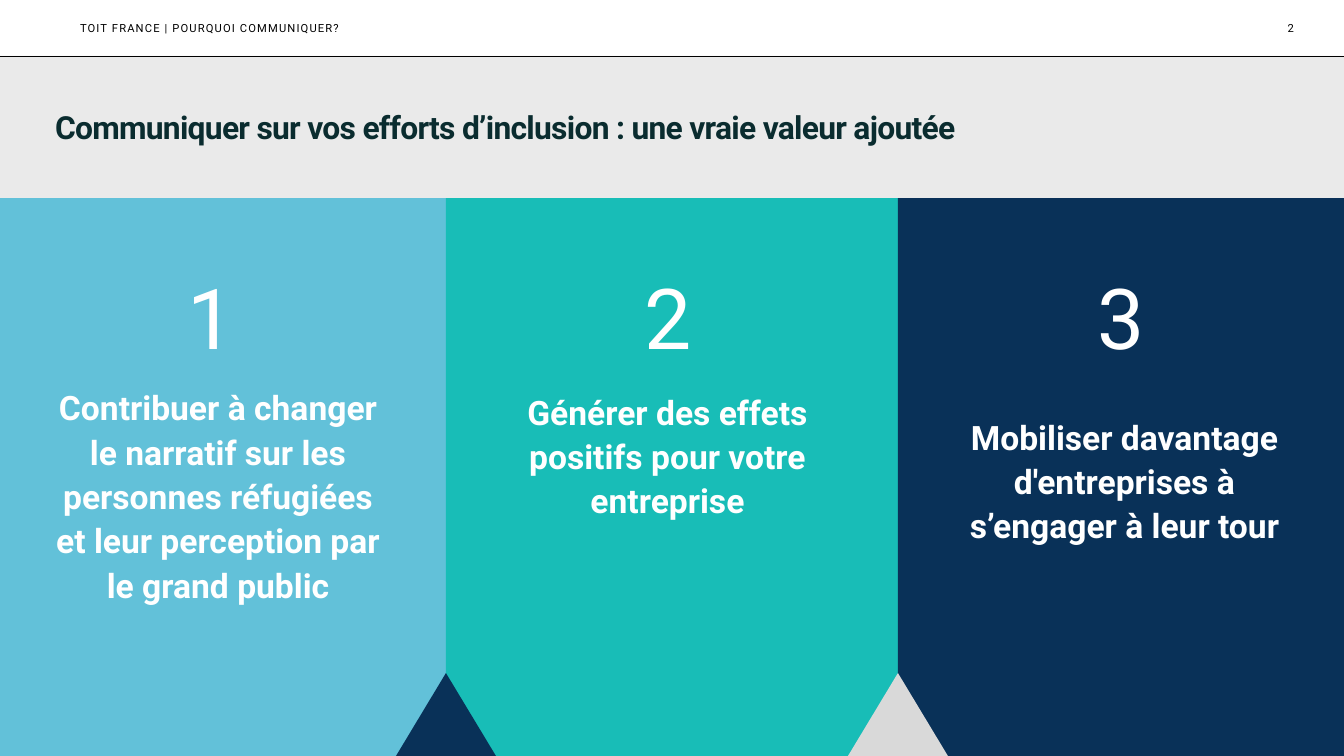
import pptx
import pptx.dml.color
import pptx.enum.shapes
import pptx.enum.text
import pptx.oxml
import pptx.oxml.ns
import pptx.util

PX = 914400 / 100.8
WIDTH, HEIGHT = 1344, 756
HEADER_H, BAND_H = 56, 142
FONT = "Roboto"
COLOURS = {
    "sky": "62C1D9", "teal": "18BDB7", "navy": "093158", "band": "EAEAEA",
    "grey": "D9D9D9", "ink": "0A2C2F", "black": "000000", "white": "FFFFFF",
}
LEFT = pptx.enum.text.PP_ALIGN.LEFT
CENTER = pptx.enum.text.PP_ALIGN.CENTER
RIGHT = pptx.enum.text.PP_ALIGN.RIGHT
TOP = pptx.enum.text.MSO_ANCHOR.TOP
MIDDLE = pptx.enum.text.MSO_ANCHOR.MIDDLE

# panel: left, width, colour, number left, caption box (left, top, width), caption
PANELS = [
    (0, 446, "sky", 188, (45, 374, 346),
     "Contribuer à changer le narratif sur les personnes réfugiées "
     "et leur perception par le grand public"),
    (446, 452, "teal", 199, (57, 334, 329),
     "Générer des effets positifs pour votre entreprise"),
    (898, 446, "navy", 200, (60, 359, 333),
     "Mobiliser davantage d'entreprises à s’engager à leur tour"),
]
NOTCHES = [(446, "navy"), (898, "grey")]


def px(length):
    return pptx.util.Emu(round(length * PX))


def rgb(name):
    return pptx.dml.color.RGBColor.from_string(COLOURS[name])


def apply(target, values):
    for name, value in values.items():
        setattr(target, name, value)


def paint(shape, colour):
    shape.shadow.inherit = False
    shape.fill.solid()
    shape.fill.fore_color.rgb = rgb(colour)
    shape.line.fill.background()


def add_rect(slide, box, colour):
    rect = slide.shapes.add_shape(
        pptx.enum.shapes.MSO_SHAPE.RECTANGLE, *map(px, box))
    paint(rect, colour)


def write(shape, text, size, colour, bold=False, anchor=MIDDLE, spacing=0, **paragraph_format):
    frame = shape.text_frame
    apply(frame, {
        "word_wrap": True, "auto_size": pptx.enum.text.MSO_AUTO_SIZE.NONE,
        "vertical_anchor": anchor, "margin_left": 0, "margin_right": 0,
        "margin_top": 0, "margin_bottom": 0,
    })
    paragraph = frame.paragraphs[0]
    apply(paragraph, paragraph_format)
    run = paragraph.add_run()
    run.text = text
    apply(run.font, {"name": FONT, "size": pptx.util.Pt(size), "bold": bold})
    run.font.color.rgb = rgb(colour)
    if spacing:
        run.font._element.set("spc", str(spacing))


def add_text(slide, box, text, size, colour, **text_format):
    write(slide.shapes.add_textbox(*map(px, box)), text, size, colour, **text_format)


def add_header(slide, left, top, width, height):
    rule = slide.shapes.add_connector(
        pptx.enum.shapes.MSO_CONNECTOR.STRAIGHT,
        px(left), px(top + height), px(left + width), px(top + height))
    rule.line.color.rgb = rgb("black")
    rule.line.width = pptx.util.Pt(0.25)
    rule._element.spPr.append(pptx.oxml.parse_xml(
        "<a:effectLst %s/>" % pptx.oxml.ns.nsdecls("a")))
    add_text(slide, (left + 80, top, 483, height), "TOIT FRANCE | POURQUOI COMMUNIQUER?",
             8, "black", spacing=80, alignment=LEFT)
    add_text(slide, (left + width - 364, top, 314, height), "2", 8, "black", alignment=RIGHT)


def add_title_band(slide, left, top, width, height):
    add_rect(slide, (left, top, width, height), "band")
    title = slide.shapes.title
    apply(title, {"left": px(left + 55), "top": px(top),
                  "width": px(width - 106), "height": px(height)})
    write(title, "Communiquer sur vos efforts d’inclusion : une vraie valeur ajoutée",
          22.7, "ink", bold=True, spacing=-50, alignment=LEFT)
    # Bring the title in front of its band
    slide.shapes._spTree.append(title._element)


def add_panel(slide, box, colour, number, number_left, caption_box, caption):
    left = box[0]
    add_rect(slide, box, colour)
    add_text(slide, (left + number_left, 245, 57, 101), str(number), 60, "white",
             anchor=TOP, alignment=LEFT, line_spacing=1.2)
    caption_left, caption_top, caption_width = caption_box
    add_text(slide, (left + caption_left, caption_top, caption_width, 240), caption, 24, "white",
             bold=True, alignment=CENTER, line_spacing=1.1)


def add_notch(slide, apex, top, half_width, height, colour):
    outline = slide.shapes.build_freeform(px(apex), px(top))
    outline.add_line_segments([
        (px(apex - half_width), px(top + height)),
        (px(apex + half_width), px(top + height))], close=True)
    paint(outline.convert_to_shape(), colour)


def main():
    deck = pptx.Presentation()
    deck.slide_width, deck.slide_height = px(WIDTH), px(HEIGHT)
    slide = deck.slides.add_slide(deck.slide_layouts[5])

    # Three numbered panels
    panels_top = HEADER_H + BAND_H
    for number, (left, width, colour, *content) in enumerate(PANELS, 1):
        add_panel(slide, (left, panels_top, width, HEIGHT - panels_top), colour, number, *content)

    # Notches between the panels
    for apex, colour in NOTCHES:
        add_notch(slide, apex, HEIGHT - 83, 50, 83, colour)

    # Title band and header
    add_title_band(slide, 0, HEADER_H, WIDTH, BAND_H)
    add_header(slide, 0, 0, WIDTH, HEADER_H)

    deck.save("out.pptx")


if __name__ == "__main__":
    main()
